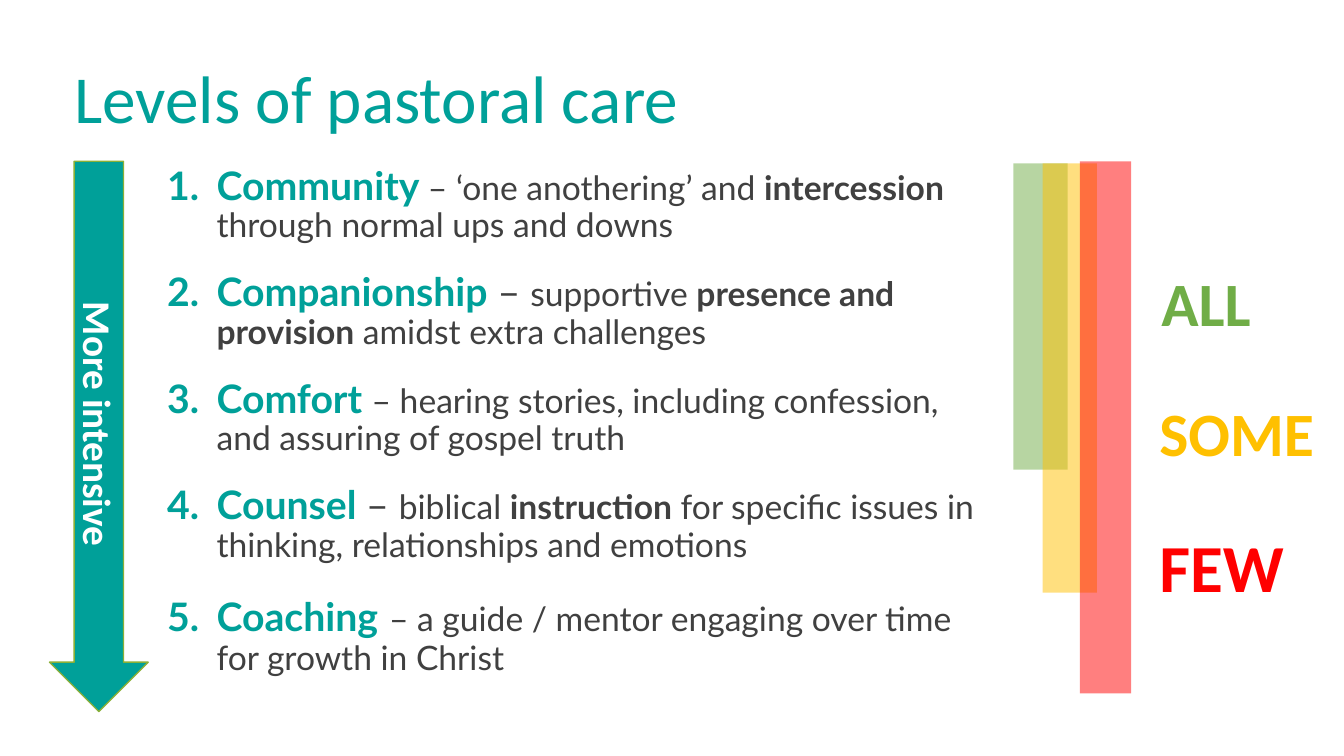
import dataclasses
import typing

import lxml.etree
import pptx
import pptx.dml.color
import pptx.enum.shapes
import pptx.enum.text
import pptx.oxml.ns
import pptx.util

Inches = pptx.util.Inches
Pt = pptx.util.Pt
RGBColor = pptx.dml.color.RGBColor
Shape = pptx.enum.shapes.MSO_SHAPE
Anchor = pptx.enum.text.MSO_ANCHOR
Align = pptx.enum.text.PP_ALIGN
Fit = pptx.enum.text.MSO_AUTO_SIZE
qn = pptx.oxml.ns.qn

TEAL = RGBColor(0x00, 0xA0, 0x99)
OLIVE = RGBColor(0x8A, 0xB0, 0x37)
GREY = RGBColor(0x40, 0x40, 0x40)
WHITE = RGBColor(0xFF, 0xFF, 0xFF)
GREEN = RGBColor(0x70, 0xAD, 0x47)
GOLD = RGBColor(0xFF, 0xC0, 0x00)
RED = RGBColor(0xFF, 0x00, 0x00)


@dataclasses.dataclass
class Run:
    text: str
    size: float = 24
    bold: bool = False
    color: RGBColor = GREY
    face: str = "Lato"


@dataclasses.dataclass
class Box:
    left: float
    top: float
    width: float
    height: float

    def frame(self) -> list[int]:
        return [Inches(side) for side in dataclasses.astuple(self)]


@dataclasses.dataclass
class Group:
    color: RGBColor
    bar: Box
    label: Run
    place: Box


def head(text: str) -> Run:
    return Run(text, 28, True, TEAL)


def label(text: str, size: float, color: RGBColor) -> Run:
    return Run(text, size, True, color, "Calibri")


TITLE = Run("Levels of pastoral care", 48, False, TEAL, "Calibri")

LEVELS = [
    [head("Community "), Run("– ‘one anothering’ and "),
     Run("intercession", bold=True), Run(" through normal ups and downs")],
    [head("Companionship"), Run(" – ", 28), Run("supportive "),
     Run("presence and provision", bold=True),
     Run(" amidst extra challenges")],
    [head("Comfort "),
     Run("– hearing stories, including confession, and assuring of gospel truth")],
    [head("Counsel "), Run("– ", 28), Run("biblical "),
     Run("instruction", bold=True),
     Run(" for specific issues in thinking, relationships and emotions")],
    [head("Coaching"), Run(" ", 32, True),
     Run("– a guide / mentor engaging over time for growth in Christ")],
]

GROUPS = [
    Group(GREEN, Box(10.05, 1.62, 0.54, 3.04),
          label("ALL", 44, GREEN), Box(11.42, 2.58, 1.1, 0.84)),
    Group(GOLD, Box(10.34, 1.62, 0.54, 4.26),
          label("SOME", 44, GOLD), Box(11.4, 3.87, 1.75, 0.84)),
    Group(RED, Box(10.71, 1.6, 0.51, 5.28),
          label("FEW", 48, RED), Box(11.4, 5.16, 1.45, 0.91)),
]


def format_all(target: typing.Any, values: dict[str, typing.Any]) -> None:
    for name, value in values.items():
        setattr(target, name, value)


def write(para: typing.Any, runs: list[Run]) -> None:
    for item in runs:
        run = para.add_run()
        run.text = item.text
        format_all(run.font, {"name": item.face, "size": Pt(item.size),
                              "bold": item.bold})
        run.font.color.rgb = item.color


def add_text(slide: typing.Any, box: Box, **values: typing.Any) -> typing.Any:
    frame = slide.shapes.add_textbox(*box.frame()).text_frame
    format_all(frame, {"word_wrap": True, **values})
    return frame


def add_block(slide: typing.Any, kind: Shape, box: Box,
              color: RGBColor) -> typing.Any:
    shape = slide.shapes.add_shape(kind, *box.frame())
    shape.shadow.inherit = False
    shape.fill.solid()
    shape.fill.fore_color.rgb = color
    shape.line.fill.background()
    return shape


def add_title(slide: typing.Any) -> None:
    frame = add_text(slide, Box(0.64, 0.52, 9.97, 0.98),
                     vertical_anchor=Anchor.MIDDLE)
    para = frame.paragraphs[0]
    para.line_spacing = 0.9
    write(para, [TITLE])


def add_levels(slide: typing.Any) -> None:
    frame = add_text(slide, Box(1.56, 1.6, 8.2, 5.23))
    for index, runs in enumerate(LEVELS):
        para = frame.add_paragraph() if index else frame.paragraphs[0]
        # Numbered hanging indent
        props = para._p.get_or_add_pPr()
        props.set("marL", str(Inches(0.49)))
        props.set("indent", str(-Inches(0.49)))
        lxml.etree.SubElement(props, qn("a:buFont"), typeface="+mj-lt")
        lxml.etree.SubElement(props, qn("a:buAutoNum"), type="arabicPeriod")
        format_all(para, {"line_spacing": 0.9,
                          "space_before": Pt(20 if index else 0)})
        write(para, runs)


def add_arrow(slide: typing.Any) -> None:
    arrow = add_block(slide, Shape.RIGHT_ARROW,
                      Box(-1.75, 3.84, 5.46, 0.98), TEAL)
    arrow.rotation = 90
    arrow.line.color.rgb = OLIVE
    arrow.line.width = Pt(1)
    arrow.text_frame.vertical_anchor = Anchor.MIDDLE
    para = arrow.text_frame.paragraphs[0]
    para.alignment = Align.CENTER
    write(para, [label("More intensive", 28, WHITE)])


def add_groups(slide: typing.Any) -> None:
    for group in GROUPS:
        frame = add_text(slide, group.place, word_wrap=False,
                         auto_size=Fit.SHAPE_TO_FIT_TEXT)
        write(frame.paragraphs[0], [group.label])
    for group in GROUPS:
        bar = add_block(slide, Shape.RECTANGLE, group.bar, group.color)
        # Half clear fill
        tint = bar._element.spPr.find(f"{qn('a:solidFill')}/{qn('a:srgbClr')}")
        lxml.etree.SubElement(tint, qn("a:alpha"), val="50000")


def main() -> None:
    deck = pptx.Presentation()
    format_all(deck, {"slide_width": Inches(13.33),
                      "slide_height": Inches(7.5)})
    slide = deck.slides.add_slide(deck.slide_layouts[6])
    add_title(slide)
    add_levels(slide)
    add_arrow(slide)
    add_groups(slide)
    deck.save("out.pptx")


if __name__ == "__main__":
    main()
